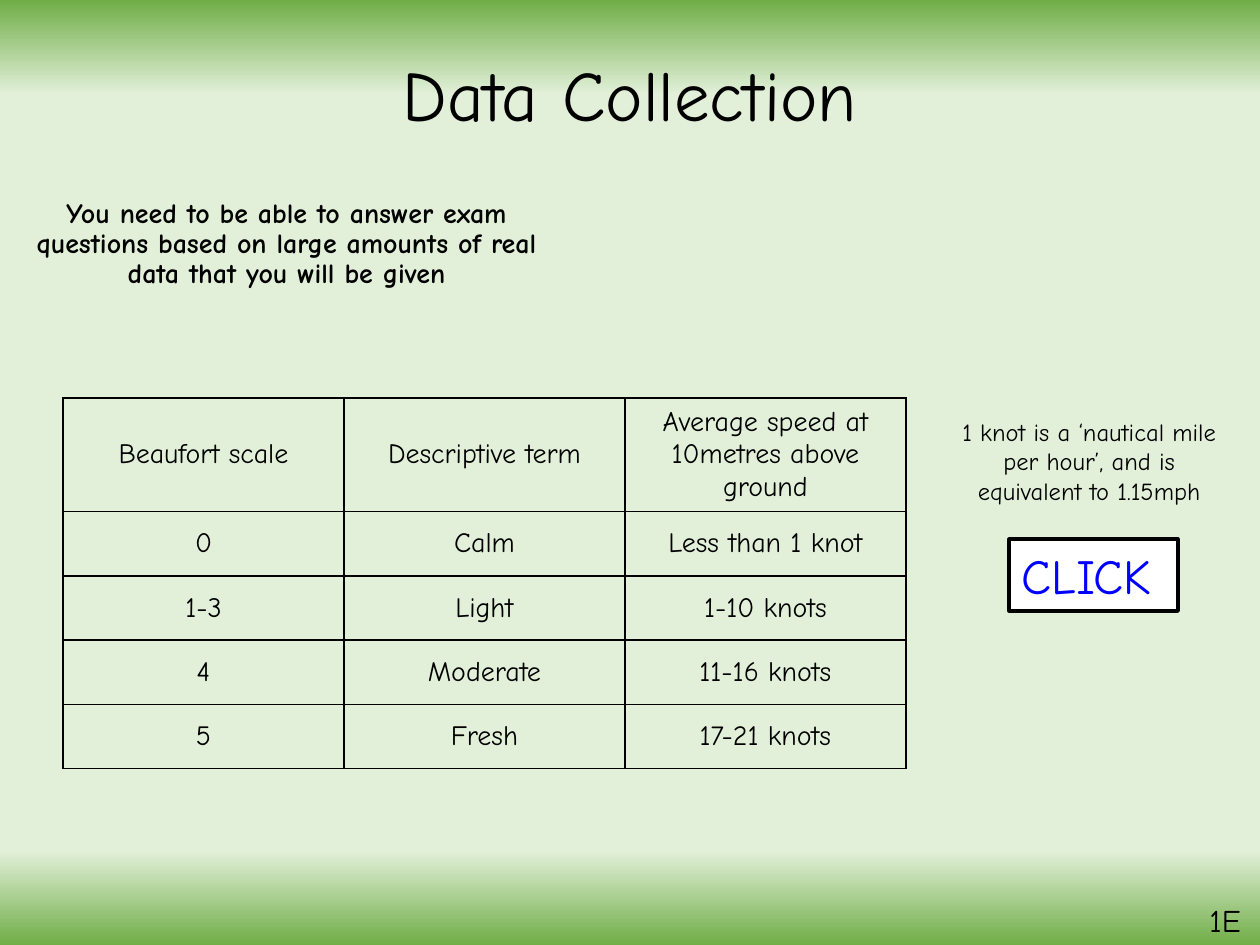
from dataclasses import dataclass, field

from lxml.etree import SubElement
from pptx import Presentation
from pptx.dml.color import RGBColor
from pptx.enum.shapes import MSO_SHAPE as Shape
from pptx.enum.text import MSO_ANCHOR as Anchor, MSO_AUTO_SIZE as AutoSize, PP_ALIGN as Align
from pptx.oxml.ns import qn
from pptx.util import Inches, Pt

FONT = "Comic Neue"
BLACK, WHITE, BLUE = "000000", "FFFFFF", "0000FF"
GREEN, PALE_GREEN = "70AD47", "E2F0D9"
BACKGROUND_STOPS = [(0, GREEN), (10, PALE_GREEN), (90, PALE_GREEN), (100, GREEN)]

BEAUFORT_ROWS = [
    ("Beaufort scale", "Descriptive term", "Average speed at 10metres above ground"),
    ("0", "Calm", "Less than 1 knot"),
    ("1-3", "Light", "1-10 knots"),
    ("4", "Moderate", "11-16 knots"),
    ("5", "Fresh", "17-21 knots"),
]
COL_WIDTH, HEADER_HEIGHT, ROW_HEIGHT = 2.23, 0.9, 0.51


@dataclass
class Label:
    text: str
    box: tuple[float, float, float, float]
    size: float
    bold: bool = False
    wrap: bool = True
    para: dict = field(default_factory=dict)


LABELS = [
    Label("You need to be able to answer exam questions based on large amounts "
          "of real data that you will be given", (0.16, 1.53, 4.23, 5.22), 16, bold=True,
          para={"alignment": Align.CENTER, "line_spacing": 0.9, "space_before": Pt(10)}),
    Label("1E", (9.5, 7.1, 0.47, 0.4), 18, wrap=False),
    Label("1 knot is a ‘nautical mile per hour’, and is equivalent to 1.15mph",
          (7.48, 3.26, 2.33, 0.81), 14, para={"alignment": Align.CENTER}),
]


def rgb(color: str) -> RGBColor:
    return RGBColor.from_string(color)


def inches(box: tuple) -> list:
    return [Inches(v) for v in box]


def write(tf, text: str, size: float, color: str = BLACK, bold: bool = False, **para) -> None:
    p = tf.paragraphs[0]
    for name, value in para.items():
        setattr(p, name, value)
    r = p.add_run()
    r.text = text
    for name, value in {"name": FONT, "size": Pt(size), "bold": bold}.items():
        setattr(r.font, name, value)
    r.font.color.rgb = rgb(color)


def add_label(s, label: Label) -> None:
    tf = s.shapes.add_textbox(*inches(label.box)).text_frame
    tf.word_wrap = label.wrap
    write(tf, label.text, label.size, bold=label.bold, **label.para)


def add_solid(parent, color: str) -> None:
    fill = SubElement(parent, qn("a:solidFill"))
    SubElement(fill, qn("a:srgbClr"), val=color)


def paint_background(s) -> None:
    fill = s.background.fill
    fill.gradient()
    fill.gradient_angle = 90
    stops = next(s.element.iter(qn("a:gsLst")))
    for stop in list(stops):
        stops.remove(stop)
    for percent, color in BACKGROUND_STOPS:
        stop = SubElement(stops, qn("a:gs"), pos=str(percent * 1000))
        SubElement(stop, qn("a:srgbClr"), val=color)


def format_cell(cell, text: str) -> None:
    cell.vertical_anchor = Anchor.MIDDLE
    write(cell.text_frame, text, 16, alignment=Align.CENTER)
    # Borders come before the fill in the cell properties
    for side in ("lnL", "lnR", "lnT", "lnB"):
        line = SubElement(cell._tc.get_or_add_tcPr(), qn(f"a:{side}"), w=str(Pt(1)))
        add_solid(line, BLACK)
    cell.fill.background()


def add_beaufort_table(s) -> None:
    n_rows, n_cols = len(BEAUFORT_ROWS), len(BEAUFORT_ROWS[0])
    heights = [HEADER_HEIGHT] + [ROW_HEIGHT] * (n_rows - 1)
    box = (0.5, 3.16, COL_WIDTH * n_cols, sum(heights))
    table = s.shapes.add_table(n_rows, n_cols, *inches(box)).table
    table.first_row = table.horz_banding = False
    for col in table.columns:
        col.width = Inches(COL_WIDTH)
    for row, height, texts in zip(table.rows, heights, BEAUFORT_ROWS):
        row.height = Inches(height)
        for cell, text in zip(row.cells, texts):
            format_cell(cell, text)


def add_click_button(s) -> None:
    sp = s.shapes.add_shape(Shape.RECTANGLE, *inches((8.01, 4.28, 1.34, 0.57)))
    sp.shadow.inherit = False
    sp.fill.solid()
    sp.fill.fore_color.rgb = rgb(WHITE)
    sp.line.color.rgb = rgb(BLACK)
    sp.line.width = Pt(2)
    tf = sp.text_frame
    for name, value in {"word_wrap": False, "vertical_anchor": Anchor.TOP,
                        "auto_size": AutoSize.SHAPE_TO_FIT_TEXT}.items():
        setattr(tf, name, value)
    write(tf, "CLICK", 28, BLUE, alignment=Align.LEFT)


def add_title(s) -> None:
    title = s.shapes.title
    title.left, title.top, title.width, title.height = inches((0.69, 0.24, 8.62, 1.09))
    title.text_frame.vertical_anchor = Anchor.MIDDLE
    write(title.text_frame, "Data Collection", 40.5, alignment=Align.CENTER, line_spacing=0.9)


def main() -> None:
    prs = Presentation()
    prs.slide_width, prs.slide_height = Inches(10), Inches(7.5)
    s = prs.slides.add_slide(prs.slide_layouts[5])
    paint_background(s)
    add_title(s)
    for label in LABELS:
        add_label(s, label)
    add_beaufort_table(s)
    add_click_button(s)
    prs.save("out.pptx")


if __name__ == "__main__":
    main()
